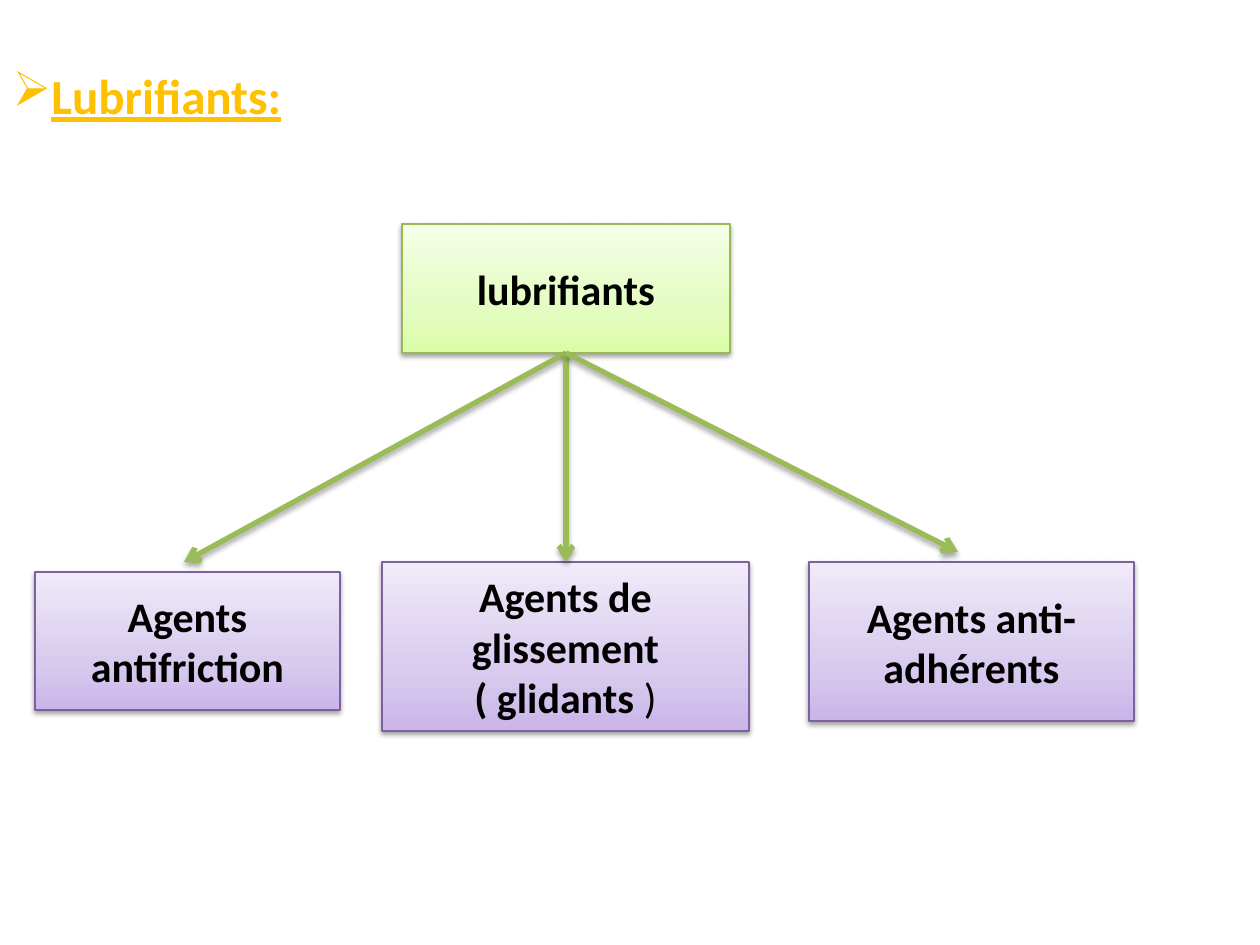
from lxml.etree import SubElement
from pptx import Presentation
from pptx.dml.color import RGBColor
from pptx.enum.shapes import MSO_CONNECTOR, MSO_SHAPE
from pptx.enum.text import MSO_ANCHOR, MSO_AUTO_SIZE, PP_ALIGN
from pptx.oxml.ns import qn
from pptx.util import Pt

BLACK = RGBColor(0, 0, 0)
GOLD = RGBColor(0xFF, 0xC0, 0x00)
GREEN = RGBColor(0x9B, 0xBB, 0x59)
LEAF = RGBColor(0x98, 0xB9, 0x55)
PLUM = RGBColor(0x7D, 0x60, 0xA0)
LIME = [RGBColor(0xDA, 0xFD, 0xA7), RGBColor(0xE4, 0xFC, 0xC2), RGBColor(0xF5, 0xFF, 0xE7)]
LILAC = [RGBColor(0xC9, 0xB5, 0xE8), RGBColor(0xD8, 0xCB, 0xEE), RGBColor(0xF0, 0xEA, 0xF9)]
STOPS = [0, 35, 100]


def px(n):
    return round(n * 914400 / 126)


def add(node, tag, **attrs):
    return SubElement(node, qn(tag), attrs)


class Deck:
    """Holds the style and the current slide, and draws each kind of element."""

    font = "Calibri"

    def __init__(self, wide, high):
        self.prs = Presentation()
        self.prs.slide_width, self.prs.slide_height = px(wide), px(high)
        self.slide = self.prs.slides.add_slide(self.prs.slide_layouts[5])

    def run(self, para, text, size, color, bold=True, under=None):
        run = para.add_run()
        run.text = text
        font = run.font
        font.name, font.size, font.bold, font.underline = self.font, Pt(size), bold, under
        font.color.rgb = color

    def shade(self, props, dist, alpha):
        glow = props.find(qn("a:effectLst"))
        if glow is None:
            glow = add(props, "a:effectLst")
        cast = add(glow, "a:outerShdw", blurRad=str(Pt(3.1)), dist=str(Pt(dist)),
                   dir="5400000", rotWithShape="0")
        tone = add(cast, "a:srgbClr", val=str(BLACK))
        add(tone, "a:alpha", val=str(alpha * 1000))

    def blend(self, shape, tones):
        shape.fill.gradient()
        shape.fill.gradient_angle = 90
        stops = shape._element.spPr.find(qn("a:gradFill")).find(qn("a:gsLst"))
        for old in list(stops):
            stops.remove(old)
        for pos, tone in zip(STOPS, tones):
            stop = add(stops, "a:gs", pos=str(pos * 1000))
            add(stop, "a:srgbClr", val=str(tone))

    def title(self, text, x, y, w, h):
        shape = self.slide.shapes.title
        shape.left, shape.top, shape.width, shape.height = map(px, (x, y, w, h))
        frame = shape.text_frame
        frame.word_wrap = False
        frame.auto_size = MSO_AUTO_SIZE.SHAPE_TO_FIT_TEXT
        frame.vertical_anchor = MSO_ANCHOR.TOP
        para = frame.paragraphs[0]
        para.alignment = PP_ALIGN.LEFT
        add(para._p.get_or_add_pPr(), "a:buChar", char="➢")
        self.run(para, text, 28, GOLD, under=True)

    def box(self, paras, x, y, w, h, tones, edge):
        shape = self.slide.shapes.add_shape(MSO_SHAPE.RECTANGLE, *map(px, (x, y, w, h)))
        self.blend(shape, tones)
        shape.line.color.rgb = edge
        shape.line.width = Pt(0.75)
        shape.shadow.inherit = False
        self.shade(shape._element.spPr, 1.6, 38)
        frame = shape.text_frame
        frame.word_wrap = True
        frame.vertical_anchor = MSO_ANCHOR.MIDDLE
        for i, runs in enumerate(paras):
            para = frame.add_paragraph() if i else frame.paragraphs[0]
            para.alignment = PP_ALIGN.CENTER
            for text, bold in runs:
                self.run(para, text, 24, BLACK, bold)

    def arrow(self, *ends):
        line = self.slide.shapes.add_connector(MSO_CONNECTOR.STRAIGHT, *map(px, ends))
        line.line.color.rgb = GREEN
        line.line.width = Pt(3)
        props = line._element.spPr
        add(props.find(qn("a:ln")), "a:tailEnd", type="arrow")
        self.shade(props, 1.8, 35)


def main():
    deck = Deck(1260, 945)
    deck.title("Lubrifiants:", 0, 59, 323, 72)
    deck.box([[("lubrifiants", True)]], 402, 224, 328, 129, LIME, LEAF)
    agents = [
        ([[("Agents antifriction", True)]], 35, 572, 305, 138),
        ([[("Agents de glissement", True)], [("( glidants ", True), (")", False)]],
         382, 562, 367, 169),
        ([[("Agents anti-adhérents", True)]], 809, 562, 325, 159),
    ]
    for paras, *area in agents:
        deck.box(paras, *area, LILAC, PLUM)
    for x, y in [(184, 562), (566, 562), (958, 552)]:
        deck.arrow(566, 353, x, y)
    deck.prs.save("out.pptx")


if __name__ == "__main__":
    main()
